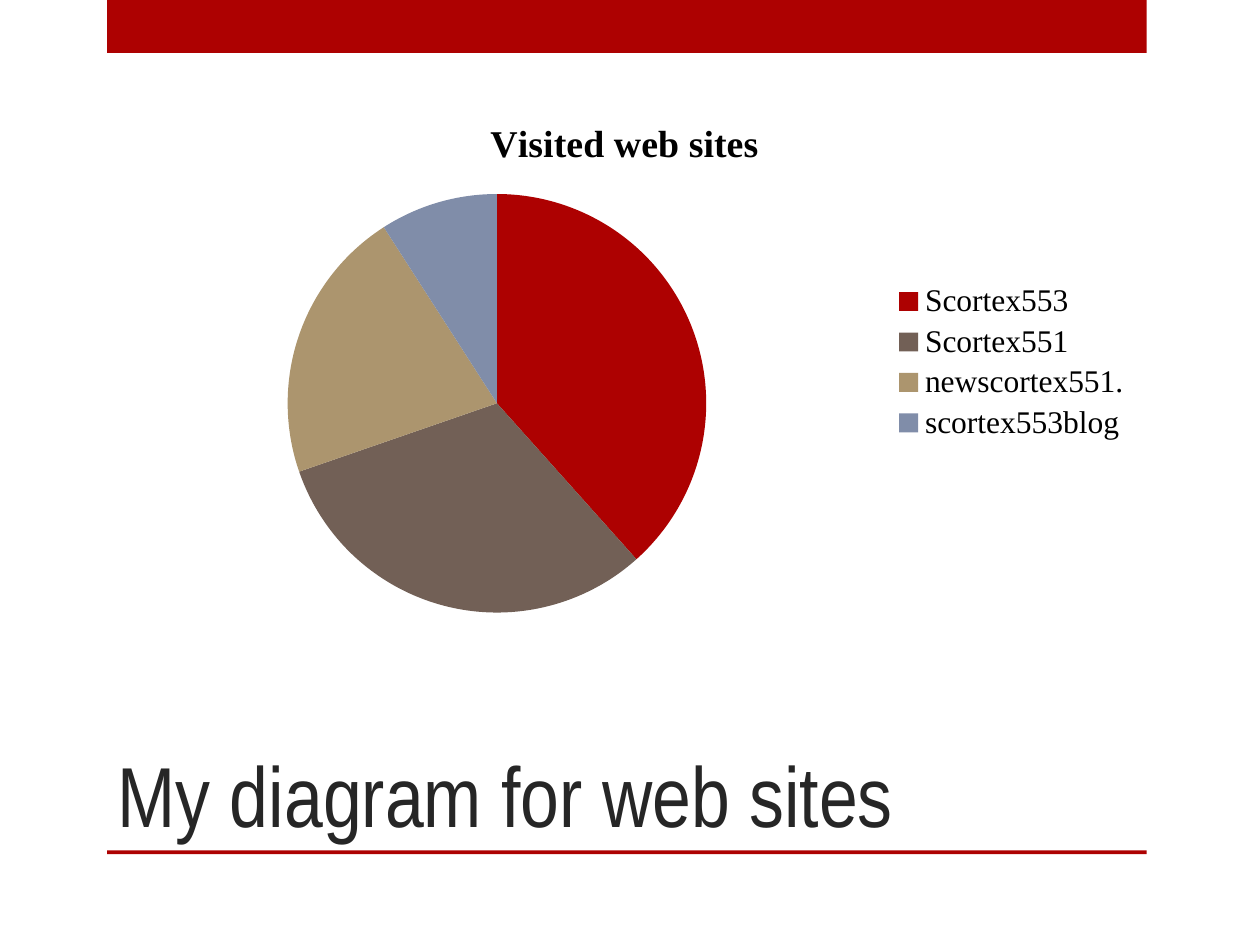
from dataclasses import dataclass

from pptx import Presentation
from pptx.chart.data import CategoryChartData
from pptx.dml.color import RGBColor
from pptx.enum.chart import XL_CHART_TYPE, XL_LEGEND_POSITION
from pptx.enum.shapes import MSO_SHAPE
from pptx.enum.text import MSO_ANCHOR, MSO_AUTO_SIZE, PP_ALIGN
from pptx.util import Inches, Pt

PIE = XL_CHART_TYPE.PIE
LEGEND_RIGHT = XL_LEGEND_POSITION.RIGHT
RECTANGLE = MSO_SHAPE.RECTANGLE
BOTTOM = MSO_ANCHOR.BOTTOM
NO_AUTOFIT = MSO_AUTO_SIZE.NONE
LEFT = PP_ALIGN.LEFT
TITLE_ONLY_LAYOUT = 5


@dataclass(frozen=True)
class Theme:
    """Colours, fonts and type sizes of the slide."""

    accent: str = "AD0101"
    title_color: str = "262626"
    chart_color: str = "000000"
    slices: tuple = ("AD0101", "726056", "AC956E", "808DA9")
    title_font: str = "Arial Narrow"
    chart_font: str = "Times New Roman"
    title_size: float = 48.6
    chart_title_size: float = 21.6
    legend_size: float = 18


THEME = Theme()
VISITS = {"Scortex553": 38, "Scortex551": 31, "newscortex551.": 21, "scortex553blog": 9}


def inches(box):
    """Turn a box of left, top, width and height into lengths."""
    return [Inches(length) for length in box]


def style_font(font, name, size, color, bold=False):
    """Set the face, size, weight and colour of a font."""
    font.name = name
    font.size = Pt(size)
    font.bold = bold
    font.color.rgb = RGBColor.from_string(color)


def add_bar(slide, box):
    """Add a plain accent bar filling the box."""
    bar = slide.shapes.add_shape(RECTANGLE, *inches(box))
    bar.shadow.inherit = False
    bar.fill.solid()
    bar.fill.fore_color.rgb = RGBColor.from_string(THEME.accent)
    bar.line.fill.background()


def place_title(slide, box, text):
    """Move the title placeholder to the box and format its text."""
    title = slide.shapes.title
    title.left, title.top, title.width, title.height = inches(box)
    frame = title.text_frame
    frame.text = text
    frame.word_wrap = True
    frame.auto_size = NO_AUTOFIT
    frame.vertical_anchor = BOTTOM
    paragraph = frame.paragraphs[0]
    paragraph.alignment = LEFT
    style_font(paragraph.runs[0].font, THEME.title_font, THEME.title_size, THEME.title_color)


def add_pie(slide, box, name, values):
    """Add a titled pie chart with its legend on the right."""
    data = CategoryChartData()
    data.categories = list(values)
    data.add_series(name, list(values.values()))
    chart = slide.shapes.add_chart(PIE, *inches(box), data).chart
    style_font(chart.font, THEME.chart_font, THEME.legend_size, THEME.chart_color)

    chart.has_title = True
    title_frame = chart.chart_title.text_frame
    title_frame.text = name
    style_font(title_frame.paragraphs[0].runs[0].font, THEME.chart_font,
               THEME.chart_title_size, THEME.chart_color, bold=True)
    chart.chart_title.include_in_layout = False

    chart.has_legend = True
    chart.legend.position = LEGEND_RIGHT
    chart.legend.include_in_layout = False

    plot = chart.plots[0]
    plot.vary_by_categories = True
    for index, color in enumerate(THEME.slices):
        fill = plot.series[0].points[index].format.fill
        fill.solid()
        fill.fore_color.rgb = RGBColor.from_string(color)


def build_chart_slide(presentation):
    """Build the slide with the pie chart above its title."""
    slide = presentation.slides.add_slide(presentation.slide_layouts[TITLE_ONLY_LAYOUT])
    width, height = presentation.slide_width.inches, presentation.slide_height.inches
    left, span = 0.085 * width, 0.825 * width
    title_top, title_bottom = height * 2 / 3, height * 0.9
    chart_top = height * 0.1
    add_bar(slide, (left, 0, span, 0.42))
    add_bar(slide, (left, title_bottom, span, 0.03))
    place_title(slide, (width / 12, title_top, span * 0.9, title_bottom - title_top),
                "My diagram for web sites")
    add_pie(slide, (width / 12, chart_top, span, title_top - chart_top),
            "Visited web sites", VISITS)


def main():
    """Create and save the presentation."""
    presentation = Presentation()
    presentation.slide_width = Inches(10)
    presentation.slide_height = Inches(7.5)
    build_chart_slide(presentation)
    presentation.save("out.pptx")


if __name__ == "__main__":
    main()
